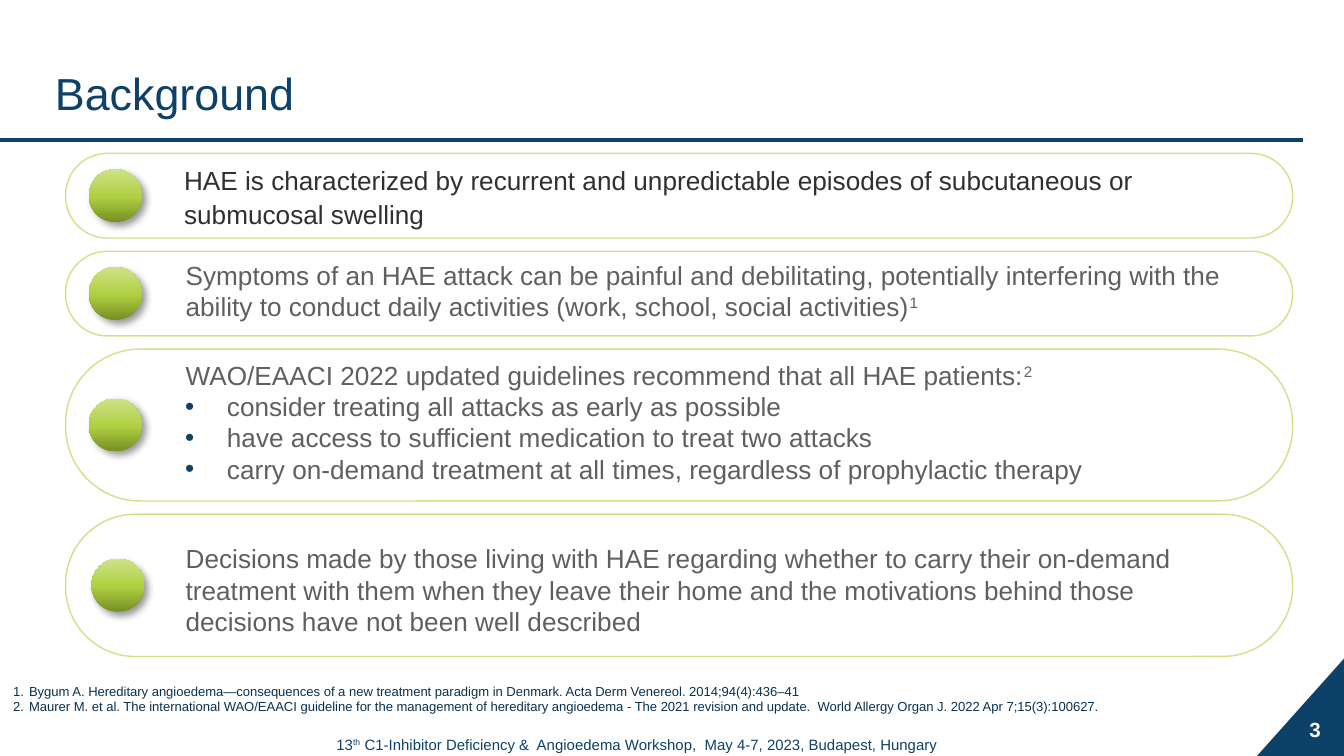
from copy import deepcopy
from dataclasses import dataclass

from lxml.etree import SubElement
from pptx import Presentation
from pptx.dml.color import RGBColor
from pptx.enum.shapes import MSO_CONNECTOR, MSO_SHAPE
from pptx.enum.text import MSO_ANCHOR, PP_ALIGN
from pptx.oxml.ns import qn
from pptx.util import Cm, Pt


@dataclass(frozen=True)
class Theme:
    font: str = "Arial"
    navy: str = "0D4167"
    reference: str = "0A314D"
    strong: str = "303030"
    body: str = "5F5F5F"
    white: str = "FFFFFF"
    outline: str = "CEE289"
    dot_stops: tuple = ((0, "768F23"), (0.48, "AFD041"), (1, "CEE289"))
    title_size: float = 24
    body_size: float = 14
    number_size: float = 11
    footer_size: float = 8
    reference_size: float = 7


THEME = Theme()


@dataclass(frozen=True)
class Statement:
    """One panel of the stack; lengths are in centimetres."""
    lines: tuple
    height: float
    text_shift: float
    color: str = THEME.body
    line_spacing: float = 1.0
    indent: float = 0.03
    dot_left: float = 1.68


STATEMENTS = (
    Statement(("HAE is characterized by recurrent and unpredictable episodes of "
               "subcutaneous or submucosal swelling",),
              1.6, 0.01, color=THEME.strong, line_spacing=1.07, indent=0),
    Statement(("Symptoms of an HAE attack can be painful and debilitating, potentially "
               "interfering with the ability to conduct daily activities "
               "(work, school, social activities)^1^",), 1.6, -0.06),
    Statement(("WAO/EAACI 2022 updated guidelines recommend that all HAE patients:^2^",
               "• consider treating all attacks as early as possible",
               "• have access to sufficient medication to treat two attacks",
               "• carry on-demand treatment at all times, regardless of prophylactic therapy"),
              2.87, -0.06),
    Statement(("Decisions made by those living with HAE regarding whether to carry their "
               "on-demand treatment with them when they leave their home and the motivations "
               "behind those decisions have not been well described",),
              2.69, 0.08, dot_left=1.73),
)
REFERENCES = (
    "Bygum A. Hereditary angioedema—consequences of a new treatment paradigm in Denmark. "
    "Acta Derm Venereol. 2014;94(4):436–41",
    "Maurer M. et al. The international WAO/EAACI guideline for the management of hereditary "
    "angioedema - The 2021 revision and update.  World Allergy Organ J. 2022 Apr "
    "7;15(3):100627.",
)
FOOTER = ("13^th^ C1-Inhibitor Deficiency &  Angioedema Workshop,  "
          "May 4-7, 2023, Budapest, Hungary")
PANEL_TOP, PANEL_GAP = 2.9, 0.25
PANEL_LEFT, PANEL_WIDTH = 1.24, 23.19
DOT_SIZE = 1.0


def rgb(color):
    return RGBColor.from_string(color)


def set_indent(paragraph, left, hanging=0):
    properties = paragraph._p.get_or_add_pPr()
    properties.set("marL", str(Cm(left)))
    properties.set("indent", str(-Cm(hanging)))
    return properties


def add_bullet(paragraph):
    properties = set_indent(paragraph, 0.81, 0.79)
    SubElement(SubElement(properties, qn("a:buClr")), qn("a:srgbClr"), val=THEME.navy)
    SubElement(properties, qn("a:buFont"), typeface=THEME.font)
    SubElement(properties, qn("a:buChar"), char="•")


def add_number(paragraph):
    properties = set_indent(paragraph, 0.3, 0.3)
    SubElement(properties, qn("a:buFont"), typeface=THEME.font)
    SubElement(properties, qn("a:buAutoNum"), type="arabicPeriod")


def add_text(slide, lines, left, top, width, height, *, size, color, bold=False,
             align=PP_ALIGN.LEFT, anchor=MSO_ANCHOR.TOP, margins=(0.25, 0.13),
             line_spacing=1.0, indent=0, numbered=False):
    """Text between ^ marks is superscript; a line that starts with • is a bullet."""
    frame = slide.shapes.add_textbox(Cm(left), Cm(top), Cm(width), Cm(height)).text_frame
    frame.word_wrap = True
    frame.vertical_anchor = anchor
    frame.margin_left = frame.margin_right = Cm(margins[0])
    frame.margin_top = frame.margin_bottom = Cm(margins[1])
    for index, line in enumerate(lines):
        paragraph = frame.add_paragraph() if index else frame.paragraphs[0]
        if numbered:
            add_number(paragraph)
        elif line.startswith("• "):
            add_bullet(paragraph)
        else:
            set_indent(paragraph, indent)
        paragraph.alignment = align
        paragraph.line_spacing = line_spacing
        for part, words in enumerate(line.removeprefix("• ").split("^")):
            if not words:
                continue
            run = paragraph.add_run()
            run.text = words
            run.font.name = THEME.font
            run.font.size = Pt(size)
            run.font.bold = bold
            run.font.color.rgb = rgb(color)
            if part % 2:
                run._r.get_or_add_rPr().set("baseline", "30000")


def add_solid(slide, kind, left, top, width, height, fill, outline=None):
    shape = slide.shapes.add_shape(kind, Cm(left), Cm(top), Cm(width), Cm(height))
    shape.shadow.inherit = False
    shape.fill.solid()
    shape.fill.fore_color.rgb = rgb(fill)
    if outline:
        shape.line.color.rgb = rgb(outline)
        shape.line.width = Pt(0.75)
    else:
        shape.line.fill.background()
    return shape


def add_dot(slide, left, top):
    """Glossy green ball with a soft shadow to the lower right."""
    dot = add_solid(slide, MSO_SHAPE.OVAL, left, top, DOT_SIZE, DOT_SIZE, THEME.white)
    dot.fill.gradient()
    dot.fill.gradient_angle = 90
    properties = dot._element.spPr
    stop_list = properties.find(".//" + qn("a:gsLst"))
    stop_list.append(deepcopy(stop_list[0]))
    for stop, (position, color) in zip(dot.fill.gradient_stops, THEME.dot_stops):
        stop.position = position
        stop.color.rgb = rgb(color)
    shadow = SubElement(properties.find(qn("a:effectLst")), qn("a:outerShdw"),
                        blurRad=str(Pt(4)), dist=str(Pt(3)), dir="2700000",
                        algn="tl", rotWithShape="0")
    shade = SubElement(shadow, qn("a:srgbClr"), val="000000")
    SubElement(shade, qn("a:alpha"), val="40000")


def add_statement(slide, statement, top):
    panel = add_solid(slide, MSO_SHAPE.ROUNDED_RECTANGLE, PANEL_LEFT, top, PANEL_WIDTH,
                      statement.height, THEME.white, THEME.outline)
    panel.adjustments[0] = 0.49
    add_dot(slide, statement.dot_left, top + (statement.height - DOT_SIZE) / 2)
    add_text(slide, statement.lines, 3.3, top + statement.text_shift, 20.45,
             statement.height, size=THEME.body_size, color=statement.color,
             anchor=MSO_ANCHOR.MIDDLE, margins=(0.18, 0.1),
             line_spacing=statement.line_spacing, indent=statement.indent)


def add_title_rule(slide):
    rule = slide.shapes.add_connector(MSO_CONNECTOR.STRAIGHT,
                                      Cm(24.63), Cm(2.64), Cm(-0.03), Cm(2.64))
    rule.line.color.rgb = rgb(THEME.navy)
    rule.line.width = Pt(2)
    SubElement(rule._element.spPr, qn("a:effectLst"))


def main():
    presentation = Presentation()
    presentation.slide_width, presentation.slide_height = Cm(25.4), Cm(14.29)
    slide = presentation.slides.add_slide(presentation.slide_layouts[6])

    corner = add_solid(slide, MSO_SHAPE.RIGHT_TRIANGLE, 23.62, 12.55, 1.88, 1.68, THEME.navy)
    corner.rotation = 270
    add_title_rule(slide)
    add_text(slide, ["Background"], 0.79, 0.51, 23.83, 1.88, size=THEME.title_size,
             color=THEME.navy, anchor=MSO_ANCHOR.BOTTOM)
    add_text(slide, ["3"], 24.31, 13.41, 1.09, 0.76, size=THEME.number_size,
             color=THEME.white, bold=True, align=PP_ALIGN.CENTER, anchor=MSO_ANCHOR.MIDDLE)

    top = PANEL_TOP
    for statement in STATEMENTS:
        add_statement(slide, statement, top)
        top += statement.height + PANEL_GAP

    add_text(slide, REFERENCES, 0, 12.78, 24.28, 0.86, size=THEME.reference_size,
             color=THEME.reference, numbered=True)
    add_text(slide, [FOOTER], 3.51, 13.77, 17.07, 0.61, size=THEME.footer_size,
             color=THEME.navy, align=PP_ALIGN.CENTER)
    presentation.save("out.pptx")


if __name__ == "__main__":
    main()
